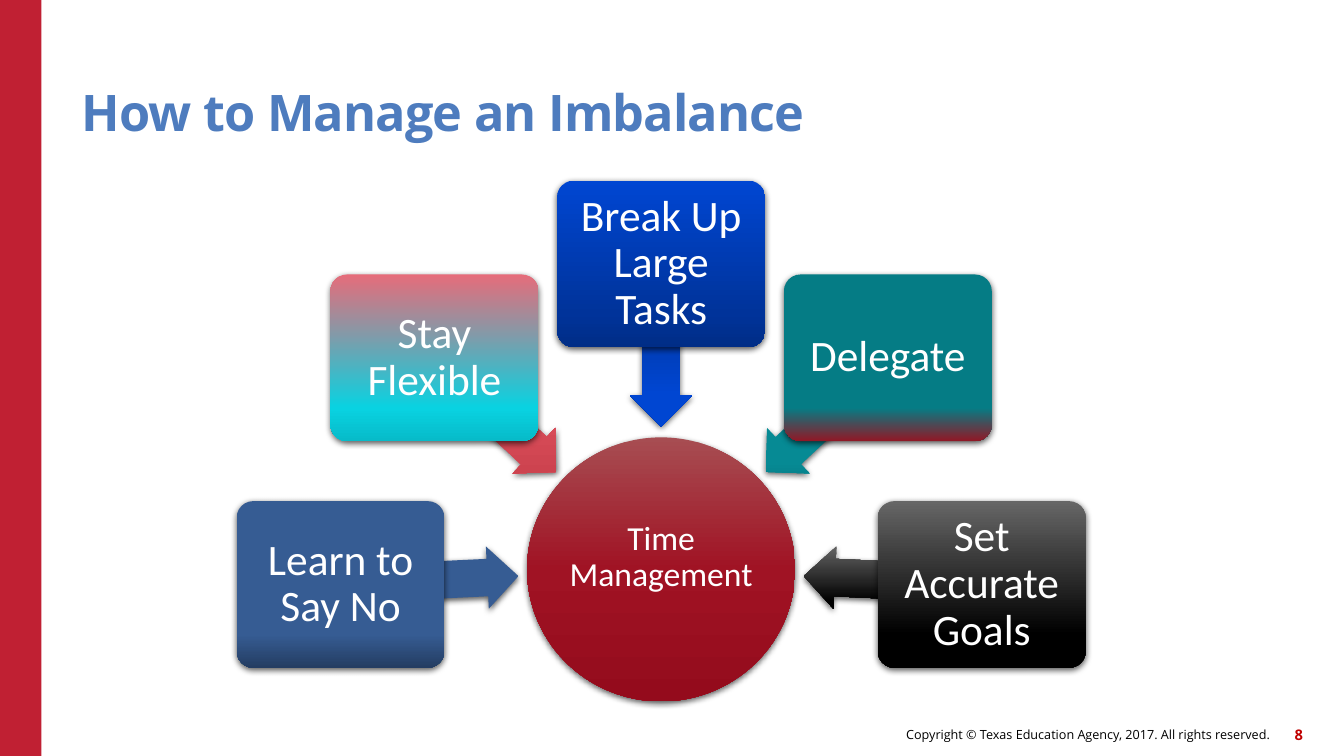
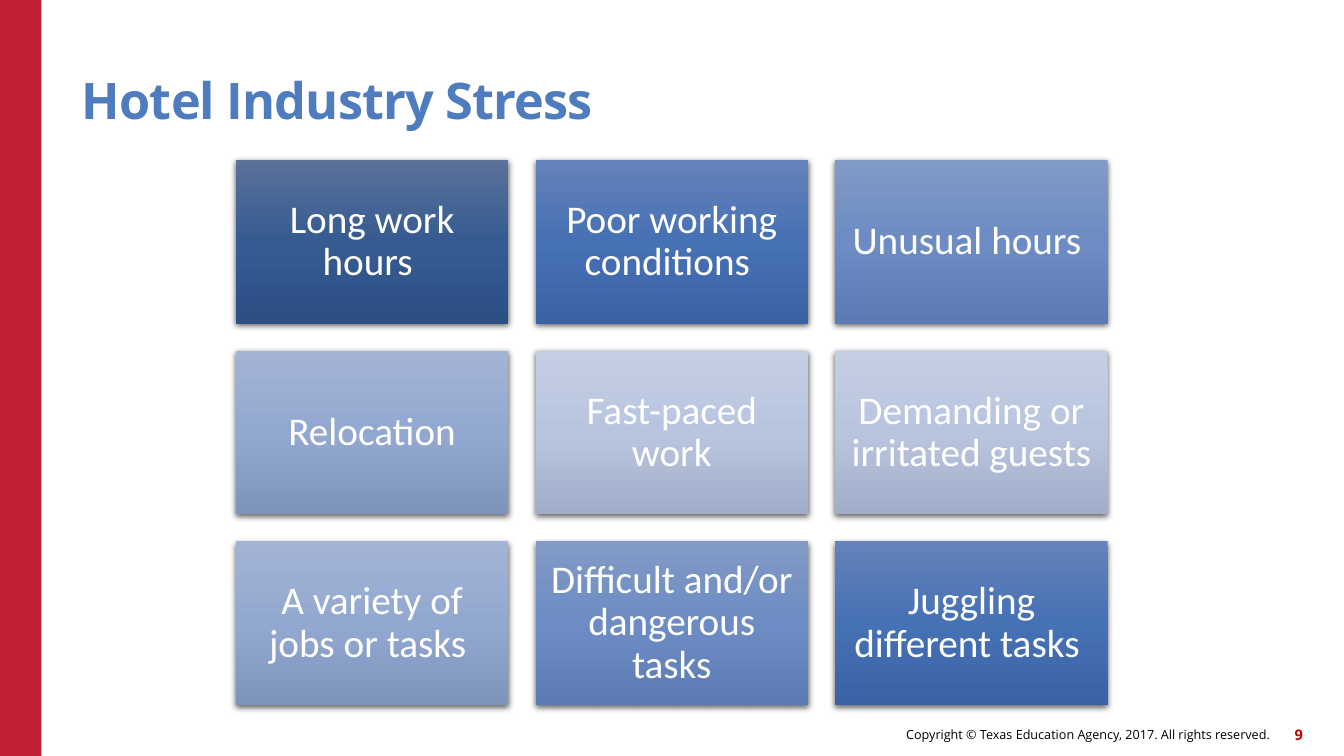
from dataclasses import dataclass
from math import atan2, cos, degrees, hypot, radians, sin
from typing import NamedTuple

from lxml.etree import SubElement
from pptx import Presentation
from pptx.dml.color import RGBColor
from pptx.enum.shapes import MSO_SHAPE as Preset
from pptx.enum.text import MSO_ANCHOR as Anchor, MSO_AUTO_SIZE as AutoSize, PP_ALIGN as Align
from pptx.oxml.ns import qn
from pptx.util import Pt


class Box(NamedTuple):
    left: float
    top: float
    width: float
    height: float

    @property
    def lengths(self):
        return [Pt(value) for value in self]


@dataclass(frozen=True)
class Theme:
    band: str = "C02033"
    title: str = "4E7CBE"
    page: str = "C00000"
    ink: str = "000000"
    light: str = "FFFFFF"
    heading_font: str = "Open Sans"
    label_font: str = "Calibri"
    title_size: float = 36
    node_size: float = 31
    tile_size: float = 28
    hub_size: float = 24
    page_size: float = 10.5
    copyright_size: float = 9
    hub: tuple = ((0, "A74D52"), (50, "A01324"), (100, "940B1C"))
    tints: tuple = (
        ("5A719A", "365B91", "2C5084"),
        ("6582BA", "4671B4", "3A63A5"),
        ("829AC6", "6C8CC3", "5C7BB2"),
        ("A3B3D4", "93A8D0", "7F94BD"),
        ("C4CEE3", "B9C5DF", "A2AEC9"),
    )


THEME = Theme()
SLIDE = Box(0, 0, 960, 540)
COPYRIGHT = "Copyright © Texas Education Agency, 2017. All rights reserved."

# Label, stops of the node, stops of its arrow; clockwise from the left
STRATEGIES = [
    ("Learn to Say No",
     ((0, "365C93"), (80, "365C93"), (100, "243D62")),
     ((0, "365C93"), (100, "365C93"))),
    ("Stay Flexible",
     ((0, "E66C7A"), (80, "09D2E1"), (100, "07BBC9")),
     ((0, "D86C74"), (50, "D94E5A"), (100, "C83E4A"))),
    ("Break Up Large Tasks",
     ((0, "0046D2"), (80, "00339A"), (100, "002D86")),
     ((0, "002D86"), (80, "0046D2"), (100, "0046D2"))),
    ("Delegate",
     ((0, "057C85"), (80, "057C85"), (100, "901826")),
     ((0, "068A94"), (80, "068A94"), (100, "05747D"))),
    ("Set Accurate Goals",
     ((0, "666666"), (80, "000000"), (100, "000000")),
     ((0, "666666"), (80, "000000"), (100, "000000"))),
]

# Label and index of its tint, row by row
STRESSES = [
    ("Long work hours ", 0), ("Poor working conditions ", 1), ("Unusual hours ", 2),
    ("Relocation", 3), ("Fast-paced work", 4), ("Demanding or irritated guests", 4),
    ("A variety of jobs or tasks ", 3), ("Difficult and/or dangerous tasks", 2),
    ("Juggling different tasks ", 1),
]


def write(shape, text, *, size, color=THEME.light, font=THEME.label_font, bold=False,
          align=Align.CENTER, anchor=Anchor.MIDDLE, inset=0, bottom=None,
          leading=None, tracking=None):
    """Fill a shape with one formatted paragraph; tracking is in points."""
    frame = shape.text_frame
    frame.word_wrap = True
    frame.auto_size = AutoSize.NONE
    frame.vertical_anchor = anchor
    frame.margin_left = frame.margin_right = frame.margin_top = Pt(inset)
    frame.margin_bottom = Pt(inset if bottom is None else bottom)
    paragraph = frame.paragraphs[0]
    paragraph.alignment = align
    if leading:
        paragraph.line_spacing = leading
    run = paragraph.add_run()
    run.text = text
    run.font.name, run.font.size, run.font.bold = font, Pt(size), bold
    run.font.color.rgb = RGBColor.from_string(color)
    if tracking:
        for properties in shape.element.iter(qn("a:rPr")):
            properties.set("spc", str(round(tracking * 100)))


def add_color(parent, color):
    return SubElement(parent, qn("a:srgbClr"), val=color)


def paint_gradient(shape, stops):
    """Run the stops from top to bottom of the slide, however the shape is turned."""
    shape.fill.background()
    properties = shape.element.spPr
    empty_fill = properties.find(qn("a:noFill"))
    gradient = SubElement(properties, qn("a:gradFill"), rotWithShape="0")
    stop_list = SubElement(gradient, qn("a:gsLst"))
    for percent, color in stops:
        add_color(SubElement(stop_list, qn("a:gs"), pos=str(percent * 1000)), color)
    SubElement(gradient, qn("a:lin"), ang="5400000", scaled="0")
    properties.replace(empty_fill, gradient)


def cast_shadow(shape):
    shape.shadow.inherit = False
    effects = shape.element.spPr.find(qn("a:effectLst"))
    shadow = SubElement(effects, qn("a:outerShdw"), blurRad=str(Pt(4.5)),
                        dist=str(Pt(1.5)), dir="5400000", rotWithShape="0")
    SubElement(add_color(shadow, THEME.ink), qn("a:alpha"), val="63000")


def add_raised(slide, preset, box, stops, *adjustments):
    shape = slide.shapes.add_shape(preset, *box.lengths)
    for index, value in enumerate(adjustments):
        shape.adjustments[index] = value
    shape.line.fill.background()
    paint_gradient(shape, stops)
    cast_shadow(shape)
    return shape


def add_page(deck, title, number, title_top):
    """Add a slide with its title, side band and footer."""
    slide = deck.slides.add_slide(deck.slide_layouts[5])
    heading = slide.shapes.title
    heading.left, heading.top, heading.width, heading.height = Box(
        58.5, title_top, 792, 69).lengths
    write(heading, title, size=THEME.title_size, color=THEME.title, font=THEME.heading_font,
          bold=True, align=Align.LEFT, anchor=Anchor.BOTTOM, leading=0.9, tracking=-0.6)

    band = slide.shapes.add_shape(Preset.RECTANGLE, *Box(0, 0, 29.5, SLIDE.height).lengths)
    band.shadow.inherit = False
    band.line.fill.background()
    band.fill.solid()
    band.fill.fore_color.rgb = RGBColor.from_string(THEME.band)

    notice = slide.shapes.add_textbox(*Box(442, 512.8, 465, 23).lengths)
    write(notice, COPYRIGHT, size=THEME.copyright_size, color=THEME.ink,
          font=THEME.heading_font, align=Align.RIGHT)
    page = slide.shapes.add_textbox(*Box(900.7, 513.3, 30, 23).lengths)
    write(page, str(number), size=THEME.page_size, color=THEME.page,
          font=THEME.heading_font, bold=True, align=Align.RIGHT)
    return slide


def add_converging_ring(slide, box, hub_label, strategies):
    """Set nodes on a half ring, each with an arrow to the hub at the bottom."""
    node_width, node_height = 148.5, 119
    hub_width, hub_height = 191.5, 188.6
    arrow_thickness, tip_distance = 44.6, 102
    center_x = box.left + box.width / 2
    hub_y = box.top + box.height - hub_height / 2
    radius = (box.width - node_width) / 2
    ring_y = box.top + node_height / 2 + radius

    def centered(x, y, width, height):
        return Box(x - width / 2, y - height / 2, width, height)

    hub = add_raised(slide, Preset.OVAL, centered(center_x, hub_y, hub_width, hub_height),
                     THEME.hub)
    write(hub, hub_label, size=THEME.hub_size, inset=1.5, bottom=18, leading=0.9)

    for index, (label, node_stops, arrow_stops) in enumerate(strategies):
        angle = radians(180 + index * 180 / (len(strategies) - 1))
        node_x = center_x + radius * cos(angle)
        node_y = ring_y + radius * sin(angle)
        run, rise = center_x - node_x, hub_y - node_y
        distance = hypot(run, rise)
        length = distance - tip_distance
        halfway = length / 2 / distance
        arrow = add_raised(
            slide, Preset.LEFT_ARROW,
            centered(node_x + run * halfway, node_y + rise * halfway, length, arrow_thickness),
            arrow_stops, 0.6, 0.5)
        arrow.rotation = (degrees(atan2(rise, run)) + 180) % 360
        node = add_raised(slide, Preset.ROUNDED_RECTANGLE,
                          centered(node_x, node_y, node_width, node_height), node_stops, 0.1)
        write(node, label, size=THEME.node_size, inset=4.3, leading=0.9)


def add_tile_grid(slide, box, stresses, columns=3, gap=19.4):
    rows = len(stresses) // columns
    width = (box.width - gap * (columns - 1)) / columns
    height = (box.height - gap * (rows - 1)) / rows
    for index, (label, tint) in enumerate(stresses):
        row, column = divmod(index, columns)
        cell = Box(box.left + column * (width + gap), box.top + row * (height + gap),
                   width, height)
        tile = add_raised(slide, Preset.RECTANGLE, cell,
                          tuple(zip((0, 50, 100), THEME.tints[tint])))
        write(tile, label, size=THEME.tile_size, inset=8.5, leading=0.9)


def main():
    deck = Presentation()
    deck.slide_width, deck.slide_height = Pt(SLIDE.width), Pt(SLIDE.height)

    balance = add_page(deck, "How to Manage an Imbalance", 8, title_top=32.5)
    add_converging_ring(balance, Box(169, 129, 606.5, 372), "Time Management", STRATEGIES)

    stress = add_page(deck, "Hotel Industry Stress", 9, title_top=24.5)
    add_tile_grid(stress, Box(168.5, 114.4, 622.7, 389.2), STRESSES)

    deck.save("out.pptx")


if __name__ == "__main__":
    main()
